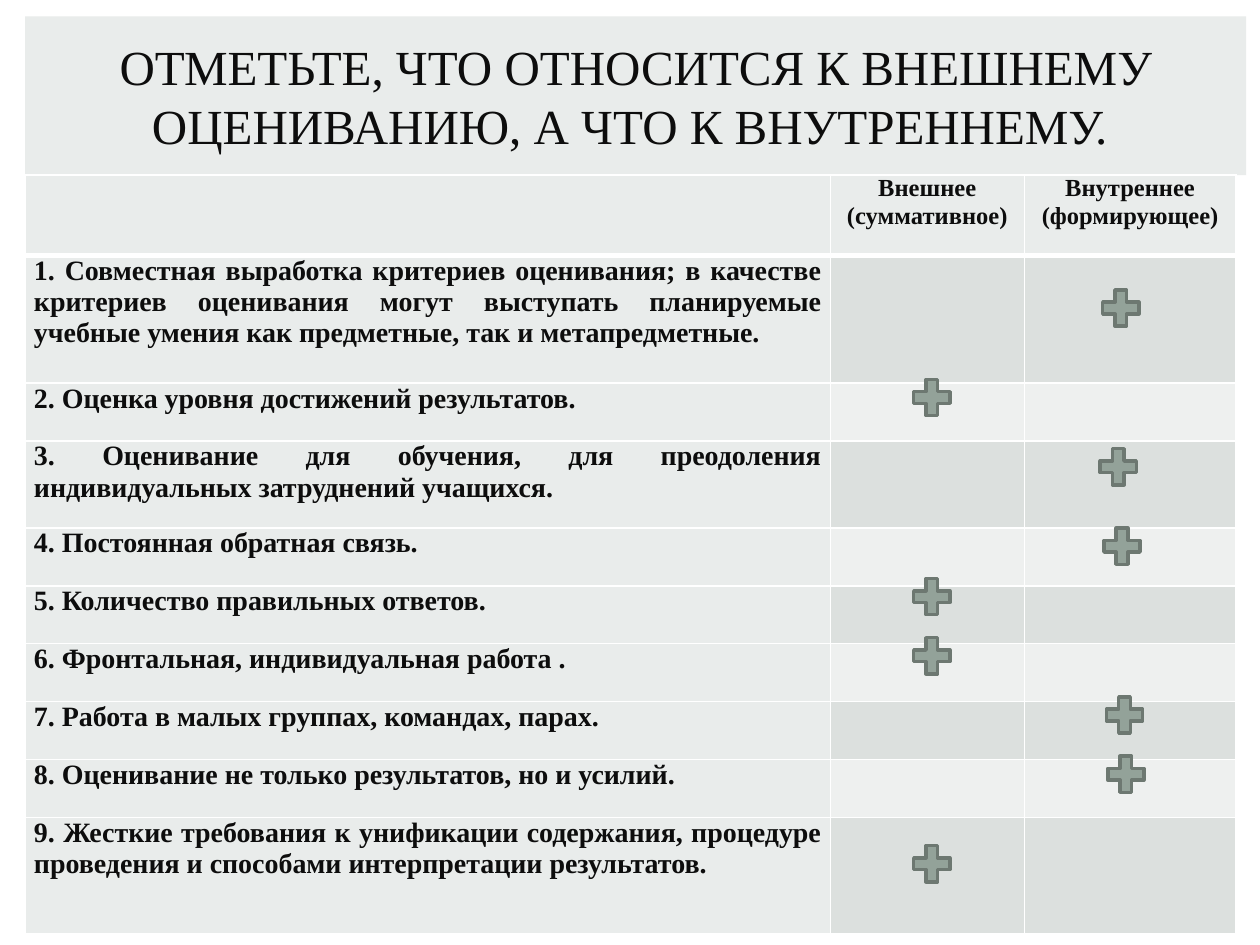
from pptx import Presentation, util as u
from pptx.dml.color import RGBColor
from pptx.enum import shapes, text
from pptx.oxml import parse_xml
from pptx.oxml.ns import nsdecls

FONT, INK, PALE = "Times New Roman", "0D0D0D", "E9ECEB"
BANDS = ["DCE0DE", "EEF0EF"]
LEFT, TOP = 0.2, 1.39
COLS = [6.39, 1.54, 1.68]
HEAD = ["", "Внешнее\n(суммативное)", "Внутреннее\n(формирующее)"]
ALIGN = text.PP_ALIGN

# Wording, row height, left and top of the plus mark
ROWS = [
    ("1. Совместная выработка критериев оценивания; в качестве критериев "
     "оценивания могут выступать планируемые учебные умения как предметные, "
     "так и метапредметные.", 1.01, 8.7, 2.25),
    ("2. Оценка уровня достижений результатов.", 0.46, 7.2, 2.96),
    ("3. Оценивание для обучения, для преодоления индивидуальных "
     "затруднений учащихся.", 0.69, 8.68, 3.51),
    ("4. Постоянная обратная связь.", 0.46, 8.71, 4.14),
    ("5. Количество правильных ответов.", 0.46, 7.2, 4.54),
    ("6. Фронтальная, индивидуальная работа .", 0.46, 7.2, 5.01),
    ("7. Работа в малых группах, командах, парах.", 0.46, 8.73, 5.48),
    ("8. Оценивание не только результатов, но и усилий.", 0.46, 8.74, 5.95),
    ("9. Жесткие требования к унификации содержания, процедуре проведения "
     "и способами интерпретации результатов.", 0.92, 7.2, 6.66),
]


def paint(fill, color):
    fill.solid()
    fill.fore_color.rgb = RGBColor.from_string(color)


def write(frame, words, size, align, bold=False):
    frame.text = words
    for par in frame.paragraphs:
        par.alignment = align
        for run in par.runs:
            run.font.name, run.font.size = FONT, u.Pt(size)
            run.font.bold = bold
            run.font.color.rgb = RGBColor.from_string(INK)


def add_title(slide, words):
    box = slide.shapes.add_textbox(*map(u.Inches, (LEFT, 0.13, 9.69, 1.26)))
    paint(box.fill, PALE)
    frame = box.text_frame
    frame.word_wrap = True
    frame.vertical_anchor = text.MSO_ANCHOR.MIDDLE
    write(frame, words, 28, ALIGN.CENTER)


def edge(cell, low):
    """White borders; low is the width of the bottom one in points."""
    props = cell._tc.get_or_add_tcPr()
    for i, (side, wide) in enumerate(zip("LRTB", (1, 1, 1, low))):
        props.insert(i, parse_xml(
            f'<a:ln{side} {nsdecls("a")} w="{u.Pt(wide)}"><a:solidFill>'
            f'<a:srgbClr val="FFFFFF"/></a:solidFill></a:ln{side}>'))


def fill_cell(cell, words, color, size, align, low=1):
    paint(cell.fill, color)
    edge(cell, low)
    if words:
        cell.margin_left = cell.margin_right = u.Inches(0.07)
        cell.margin_top = cell.margin_bottom = 0
        write(cell.text_frame, words, size, align, True)


def add_grid(slide):
    highs = [0.64] + [row[1] for row in ROWS]
    grid = slide.shapes.add_table(
        len(highs), len(COLS),
        *map(u.Inches, (LEFT, TOP, sum(COLS), sum(highs)))).table
    for col, wide in zip(grid.columns, COLS):
        col.width = u.Inches(wide)
    for row, high in zip(grid.rows, highs):
        row.height = u.Inches(high)
    for c, words in enumerate(HEAD):
        fill_cell(grid.cell(0, c), words, PALE, 14, ALIGN.CENTER, 3)
    for r, row in enumerate(ROWS):
        for c in range(len(COLS)):
            color = BANDS[r % 2] if c else PALE
            fill_cell(grid.cell(r + 1, c), "" if c else row[0],
                      color, 16, ALIGN.JUSTIFY)


def add_plus(slide, left, top):
    plus = slide.shapes.add_shape(
        shapes.MSO_SHAPE.MATH_PLUS, *map(u.Inches, (left, top, 0.39, 0.39)))
    plus.shadow.inherit = False
    paint(plus.fill, "93A299")
    paint(plus.line.fill, "6D7871")
    plus.line.width = u.Pt(2)


def main():
    deck = Presentation()
    deck.slide_width, deck.slide_height = u.Inches(10), u.Inches(7.5)
    slide = deck.slides.add_slide(deck.slide_layouts[6])
    add_title(slide, "ОТМЕТЬТЕ, ЧТО ОТНОСИТСЯ К ВНЕШНЕМУ ОЦЕНИВАНИЮ, "
                     "А ЧТО К ВНУТРЕННЕМУ. ")
    add_grid(slide)
    for _, _, left, top in ROWS:
        add_plus(slide, left, top)
    deck.save("out.pptx")


if __name__ == "__main__":
    main()
